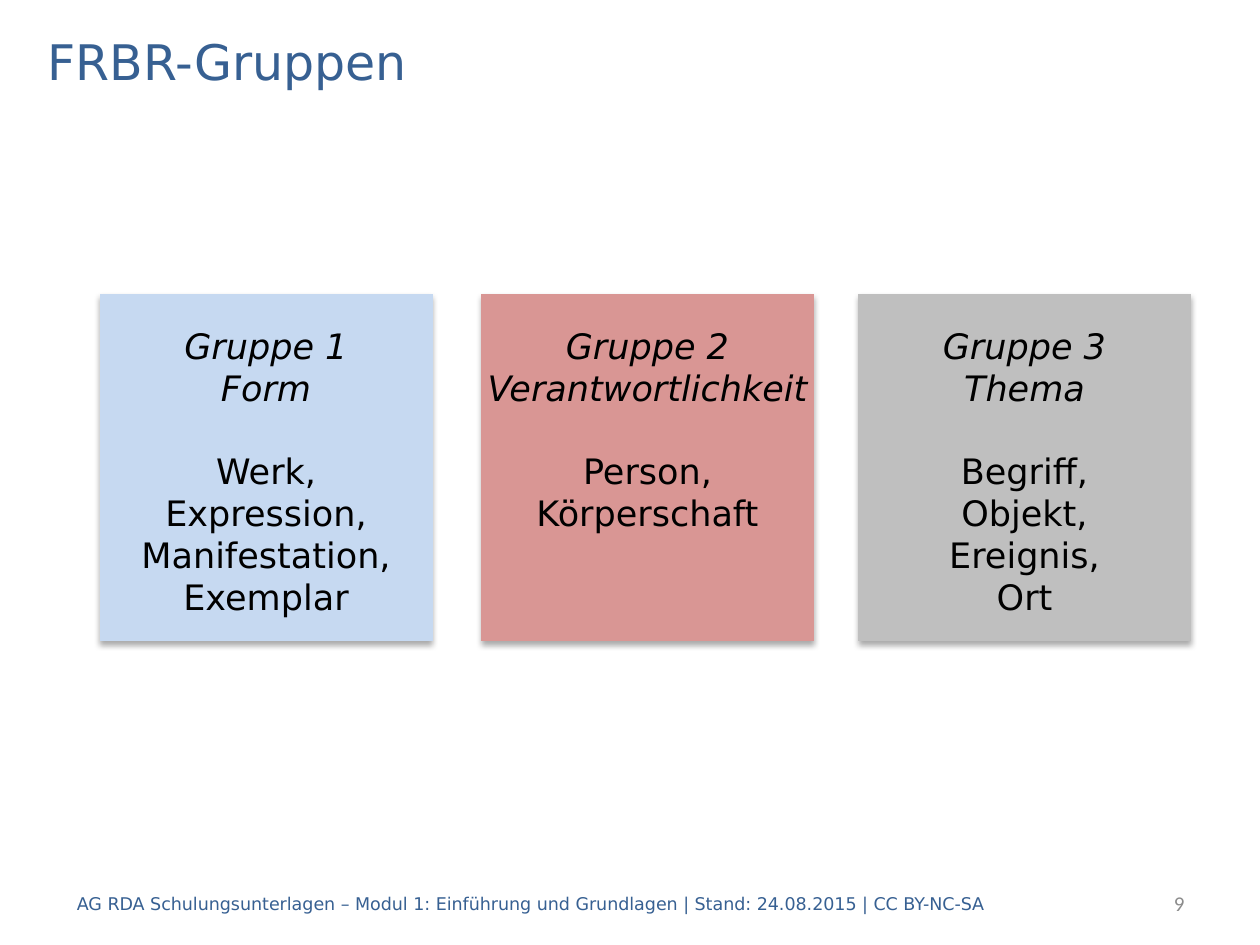
from lxml.etree import SubElement
from pptx import Presentation
from pptx.dml.color import RGBColor
from pptx.enum.shapes import MSO_SHAPE
from pptx.enum.text import MSO_ANCHOR, PP_ALIGN
from pptx.oxml.ns import qn
from pptx.util import Cm, Pt

COLORS = {
    "title": "376092",
    "number": "8C8C8C",
    "text": "000000",
    "form": "C6D9F1",
    "agent": "D99694",
    "topic": "BFBFBF",
}
SANS = "DejaVu Sans"


def style(para, size, color, face=SANS, align=PP_ALIGN.LEFT):
    para.alignment = align
    para.font.size = Pt(size)
    para.font.name = face
    para.font.color.rgb = RGBColor.from_string(COLORS[color])


def add_shadow(shape):
    shape.shadow.inherit = False
    effects = shape._element.spPr.find(qn("a:effectLst"))
    outer = SubElement(effects, qn("a:outerShdw"), blurRad=str(Pt(3.5)),
                       dist=str(Pt(2.2)), dir="5400000", rotWithShape="0")
    tint = SubElement(outer, qn("a:srgbClr"), val=COLORS["text"])
    SubElement(tint, qn("a:alpha"), val="32000")


deck = Presentation()
deck.slide_width, deck.slide_height = Cm(25.4), Cm(19.05)
slide = deck.slides.add_slide(deck.slide_layouts[6])

# Title, footer and page number
footer = ("AG RDA Schulungsunterlagen – Modul 1: Einführung und Grundlagen"
          " | Stand: 24.08.2015 | CC BY-NC-SA")
labels = [
    ("FRBR-Gruppen", (0.71, 0.51, 24, 1.42), 28, "title", SANS, PP_ALIGN.LEFT),
    (footer, (1.3, 17.7, 20.6, 1.02), 10, "title", SANS, PP_ALIGN.LEFT),
    ("9", (22.91, 17.7, 1.22, 1.02), 12, "number", "Calibri", PP_ALIGN.RIGHT),
]
for text, place, size, color, face, align in labels:
    frame = slide.shapes.add_textbox(*map(Cm, place)).text_frame
    frame.word_wrap = True
    frame.vertical_anchor = MSO_ANCHOR.MIDDLE
    frame.text = text
    style(frame.paragraphs[0], size, color, face, align)

# Group cards: two heading lines in italics, then the members
groups = [
    (2.01, "form", ["Gruppe 1", "Form"],
     ["Werk,", "Expression,", "Manifestation,", "Exemplar"]),
    (9.7, "agent", ["Gruppe 2", "Verantwortlichkeit"],
     ["Person,", "Körperschaft"]),
    (17.3, "topic", ["Gruppe 3", "Thema"],
     ["Begriff,", "Objekt,", "Ereignis,", "Ort"]),
]
for left, color, heads, items in groups:
    card = slide.shapes.add_shape(MSO_SHAPE.FLOWCHART_PROCESS, Cm(left),
                                  Cm(5.92), Cm(6.71), Cm(7.01))
    card.fill.solid()
    card.fill.fore_color.rgb = RGBColor.from_string(COLORS[color])
    card.line.fill.background()
    add_shadow(card)
    frame = card.text_frame
    frame.word_wrap = False
    frame.vertical_anchor = MSO_ANCHOR.TOP
    frame.margin_top = Cm(0.63)
    frame.text = "\n".join(heads + items)
    for row, para in enumerate(frame.paragraphs):
        style(para, 20, "text", align=PP_ALIGN.CENTER)
        para.font.italic = row < len(heads)
    frame.paragraphs[len(heads)].space_before = Pt(23.3)

deck.save("out.pptx")
